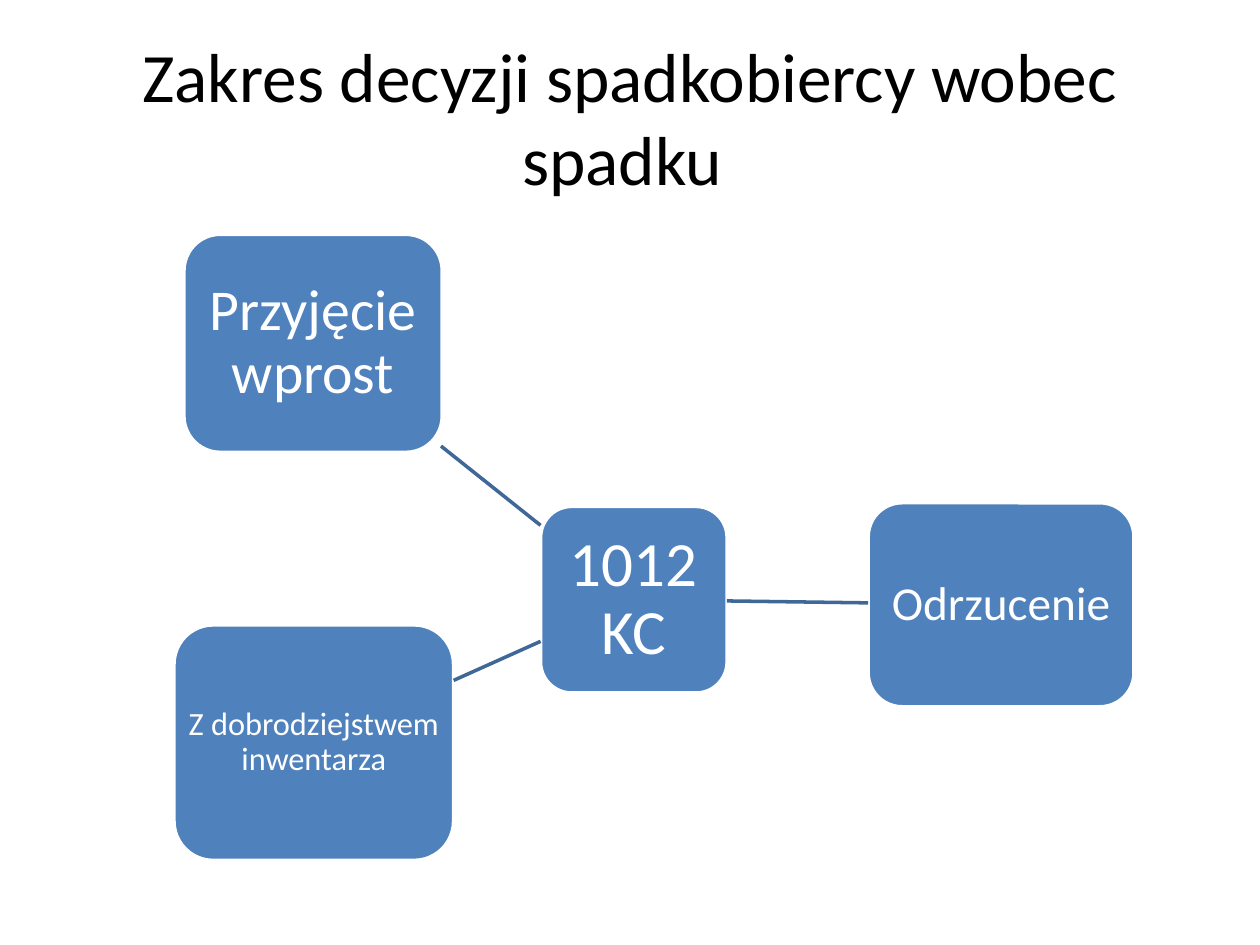
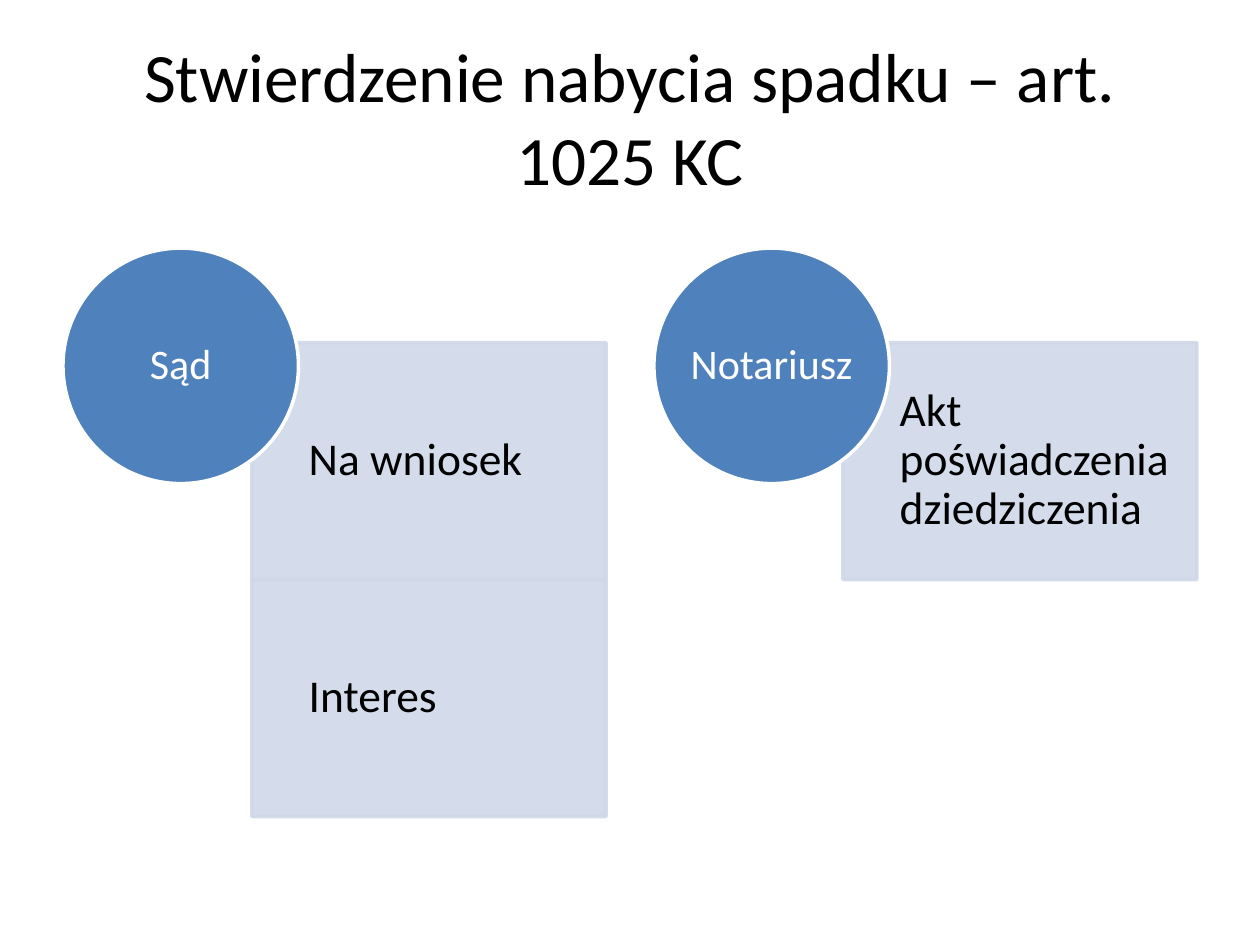
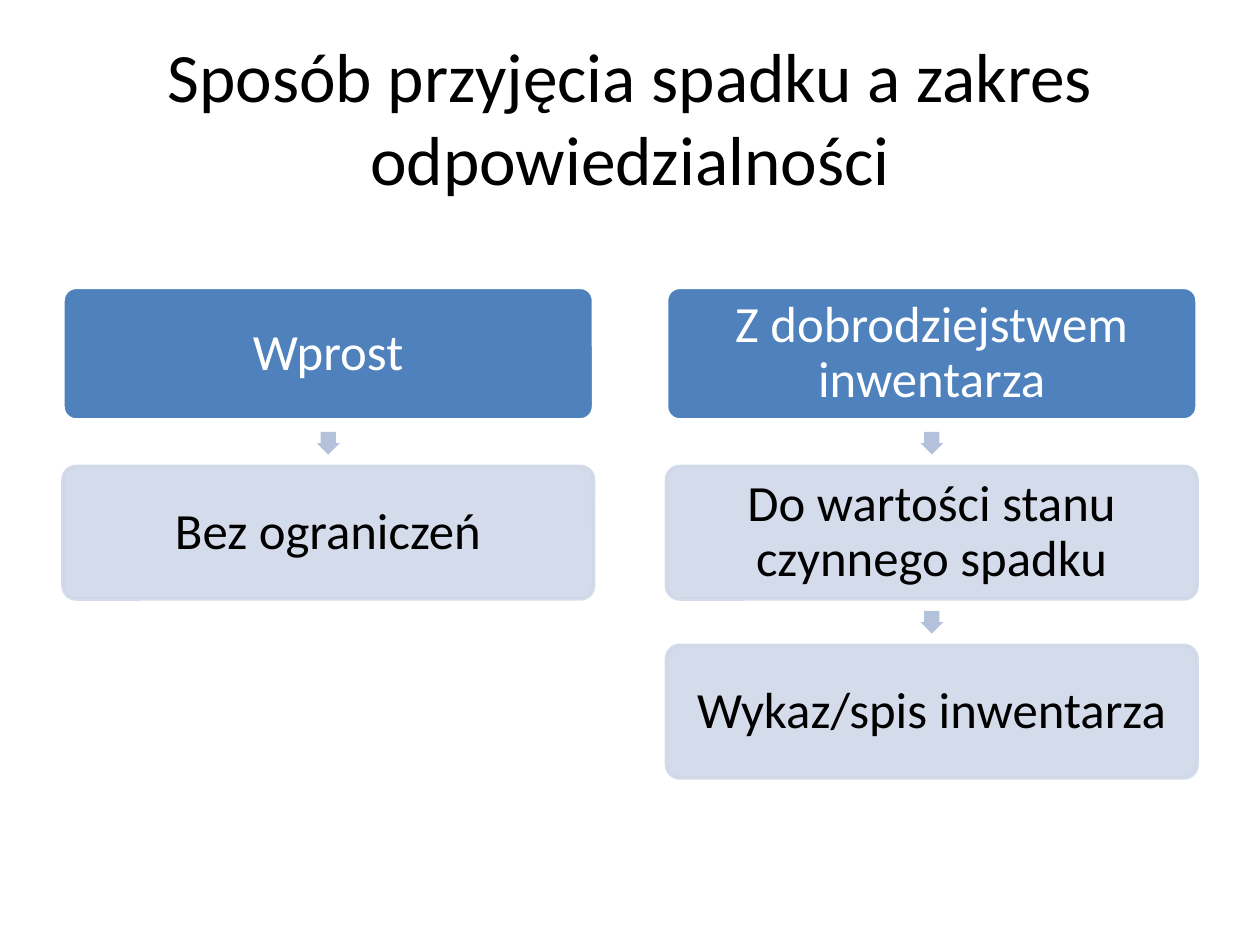
"""Build three slides on accepting, confirming and answering for an inheritance."""
import pptx
import pptx.dml.color
import pptx.enum.shapes
import pptx.enum.text
import pptx.oxml.ns
import pptx.util
from lxml import etree

Pt = pptx.util.Pt
RGBColor = pptx.dml.color.RGBColor
SHAPE = pptx.enum.shapes.MSO_SHAPE
ALIGN = pptx.enum.text.PP_ALIGN
MIDDLE = pptx.enum.text.MSO_ANCHOR.MIDDLE
qn = pptx.oxml.ns.qn

BLUE = RGBColor(0x4F, 0x81, 0xBD)
PALE = RGBColor(0xD0, 0xD8, 0xE8)
ARROW = RGBColor(0xB3, 0xC1, 0xDB)
LINK = RGBColor(0x3F, 0x67, 0x97)
WHITE = RGBColor(0xFF, 0xFF, 0xFF)
BLACK = RGBColor(0, 0, 0)

FONT = "Calibri"
LEFT = 36


def write(tf, text, size, color, align):
    """Fill a text frame with one vertically centred paragraph."""
    tf.word_wrap = True
    tf.vertical_anchor = MIDDLE
    p = tf.paragraphs[0]
    p.text = text
    p.alignment = align
    p.font.name = FONT
    p.font.size = Pt(size)
    p.font.color.rgb = color
    return p


def add_titled_slide(prs, title):
    """Add a title-only slide and format its title."""
    s = prs.slides.add_slide(prs.slide_layouts[5])
    sp = s.shapes.title
    sp.left, sp.top, sp.width, sp.height = Pt(LEFT), Pt(21.6), Pt(648), Pt(90)
    write(sp.text_frame, title, 39.6, BLACK, ALIGN.CENTER)
    return s


def add_block(s, kind, box, fill, line=None):
    """Add a flat preset shape with an optional outline."""
    sp = s.shapes.add_shape(kind, *(Pt(v) for v in box))
    sp.shadow.inherit = False
    sp.fill.solid()
    sp.fill.fore_color.rgb = fill
    if line is None:
        sp.line.fill.background()
    else:
        sp.line.color.rgb = line
        sp.line.width = Pt(2)
    return sp


def label(sp, text, size, color, insets=(0, 0, 0, 0), align=ALIGN.CENTER):
    """Write a label inside a shape, with insets left, top, right, bottom."""
    tf = sp.text_frame
    tf.margin_left, tf.margin_top, tf.margin_right, tf.margin_bottom = map(Pt, insets)
    write(tf, text, size, color, align).line_spacing = 0.9


def add_solid(s, kind, box, text, size):
    """Add a blue shape with a white label."""
    sp = add_block(s, kind, box, BLUE, WHITE)
    label(sp, text, size, WHITE)
    return sp


def add_pale(s, kind, box, text, size, **layout):
    """Add a slightly transparent pale shape with a black label."""
    sp = add_block(s, kind, box, PALE, PALE)
    for clr in sp._element.spPr.iter(qn("a:srgbClr")):
        etree.SubElement(clr, qn("a:alpha"), val="90000")
    label(sp, text, size, BLACK, **layout)
    return sp


def add_link(s, x1, y1, x2, y2):
    """Add a straight connecting line."""
    cxn = s.shapes.add_connector(
        pptx.enum.shapes.MSO_CONNECTOR.STRAIGHT, Pt(x1), Pt(y1), Pt(x2), Pt(y2))
    cxn.line.color.rgb = LINK
    cxn.line.width = Pt(2)
    etree.SubElement(cxn._element.spPr, qn("a:effectLst"))


def add_circle_group(s, x, heading, items):
    """Add a circle heading over a stack of pale panels."""
    width, height = 202.3, 135.4
    for i, item in enumerate(items):
        add_pale(s, SHAPE.RECTANGLE, (x + 108, 195.8 + i * height, width, height),
                 item, 26, insets=(32.4, 14.4, 14.4, 14.4), align=ALIGN.LEFT)
    add_solid(s, SHAPE.OVAL, (x, 141.8, 134.6, 134.6), heading, 24)


def add_chain(s, x, heading, steps):
    """Add a heading box and its steps, joined by down arrows."""
    top, width, height, pitch, arrow = 164.2, 303.2, 75.8, 102.3, 13
    for i, text in enumerate([heading, *steps]):
        y = top + i * pitch
        if i:
            middle = y - (pitch - height) / 2
            sp = add_block(s, SHAPE.DOWN_ARROW,
                           (x + (width - arrow) / 2, middle - arrow / 2, arrow, arrow), ARROW)
            sp.adjustments[0] = 0.67
        add = add_pale if i else add_solid
        sp = add(s, SHAPE.ROUNDED_RECTANGLE, (x, y, width, height), text, 29)
        sp.adjustments[0] = 0.1


def build_decisions(prs):
    """Build the hub of the heir's possible decisions."""
    s = add_titled_slide(prs, "Zakres decyzji spadkobiercy wobec spadku ")
    nodes = [
        ((308.9, 289.4, 106.6, 106.6), "1012 KC", 36),
        ((105.1, 133.9, 147.6, 124.6), "Przyjęcie wprost", 33),
        ((496.1, 287.3, 151.9, 116.6), "Odrzucenie", 27),
        ((99.4, 357.1, 159.8, 134.6), "Z dobrodziejstwem inwentarza", 18.5),
    ]
    for box, text, size in nodes:
        add_solid(s, SHAPE.ROUNDED_RECTANGLE, box, text, size)
    for ends in [(308.9, 300.2, 252, 254.9), (415.4, 343.4, 496.1, 344.5),
                 (308.9, 366.5, 259.2, 388.8)]:
        add_link(s, *ends)


def build_confirmation(prs):
    """Build the two ways of confirming the inheritance."""
    s = add_titled_slide(prs, "Stwierdzenie nabycia spadku – art. 1025 KC")
    groups = [("Sąd", ["Na wniosek", "Interes"]),
              ("Notariusz", ["Akt poświadczenia dziedziczenia"])]
    for i, (heading, items) in enumerate(groups):
        add_circle_group(s, LEFT + i * 337.7, heading, items)


def build_liability(prs):
    """Build the liability that follows each kind of acceptance."""
    s = add_titled_slide(prs, "Sposób przyjęcia spadku a zakres odpowiedzialności")
    chains = [("Wprost", ["Bez ograniczeń"]),
              ("Z dobrodziejstwem inwentarza",
               ["Do wartości stanu czynnego spadku", "Wykaz/spis inwentarza"])]
    for i, (heading, steps) in enumerate(chains):
        add_chain(s, LEFT + i * 344.9, heading, steps)


def main():
    """Build and save the presentation."""
    prs = pptx.Presentation()
    prs.slide_width, prs.slide_height = Pt(720), Pt(540)
    build_decisions(prs)
    build_confirmation(prs)
    build_liability(prs)
    prs.save("out.pptx")


if __name__ == "__main__":
    main()
